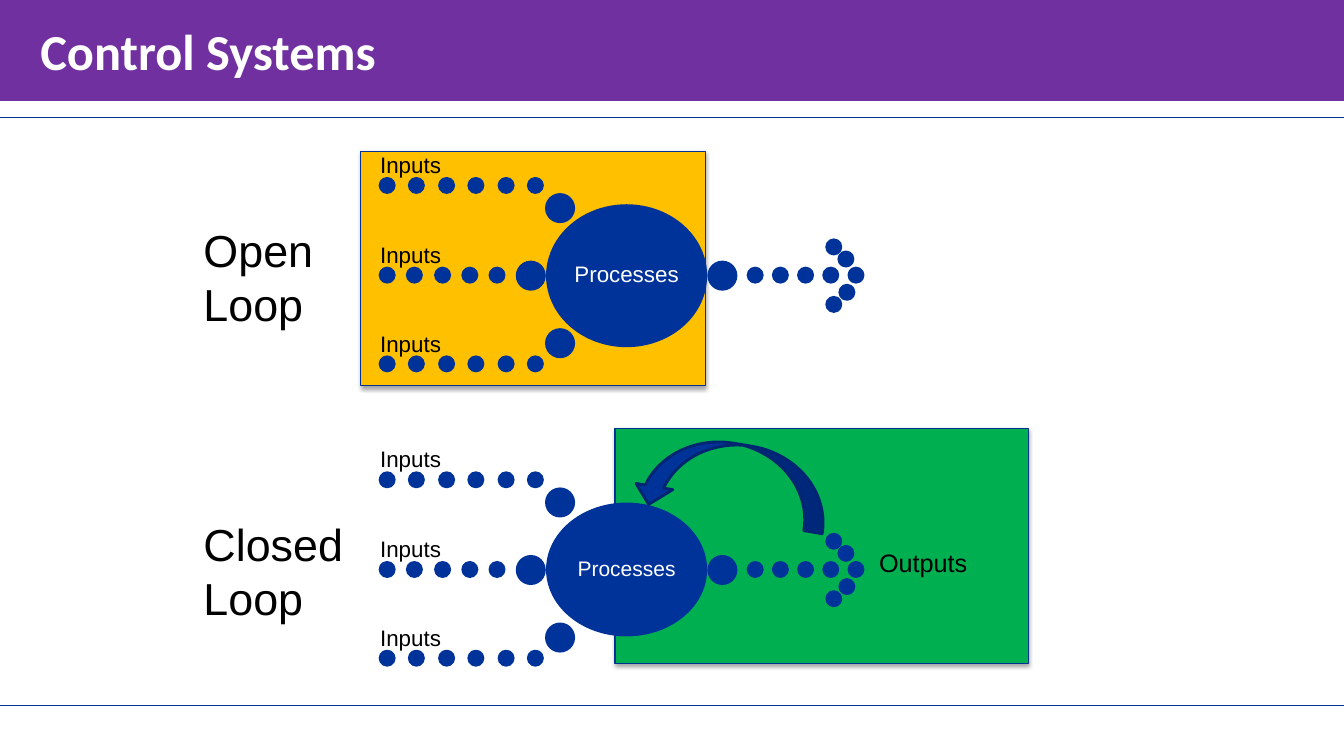
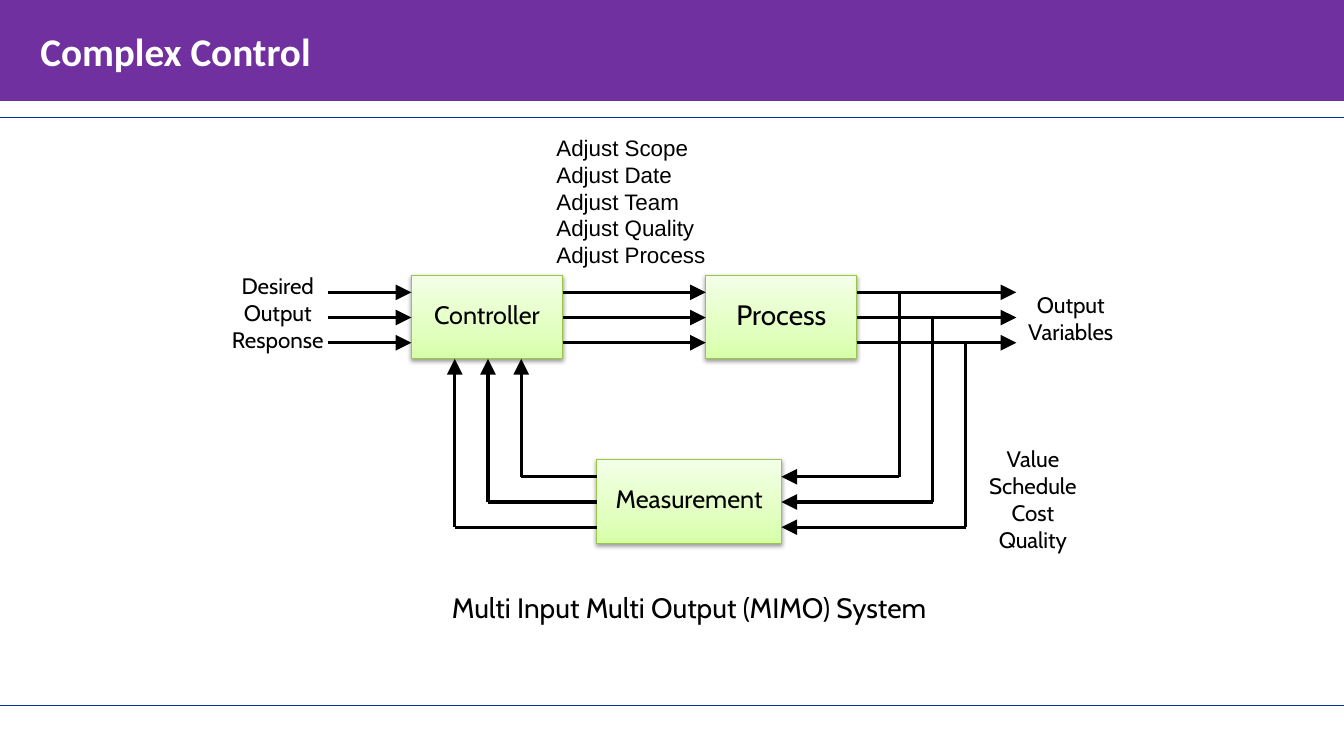
"""Build two slides on open-loop, closed-loop and multi-variable control."""
from copy import deepcopy
from dataclasses import dataclass

from lxml.etree import SubElement
from pptx import Presentation
from pptx.dml.color import RGBColor
from pptx.enum.shapes import MSO_CONNECTOR as Connector, MSO_SHAPE as Preset
from pptx.enum.text import MSO_ANCHOR as Anchor, MSO_AUTO_SIZE as AutoSize, PP_ALIGN as Align
from pptx.oxml.ns import qn
from pptx.presentation import Presentation as Deck
from pptx.shapes.autoshape import Shape
from pptx.shapes.connector import Connector as Line
from pptx.slide import Slide, SlideLayout
from pptx.text.text import TextFrame
from pptx.util import Emu, Pt

EMU_PER_PX = 9144
WIDTH, HEIGHT = 1333, 750
COLORS = {
    "band": "7030A0", "white": "FFFFFF", "black": "000000",
    "blue": "003399", "edge": "003296", "arrow_edge": "002671",
    "open": "FFC000", "closed": "00B050", "box_edge": "98C746",
    "box_low": "D6FFA8", "box_mid": "E2FFC1", "box_high": "F3FFE7",
}
GRADIENT = ((0, "box_low"), (0.35, "box_mid"), (1, "box_high"))


@dataclass(frozen=True)
class Area:
    """A rectangle in px."""
    left: int
    top: int
    width: int
    height: int

    def emu(self) -> tuple[Emu, ...]:
        """Return the four lengths in EMU."""
        return tuple(px(n) for n in (self.left, self.top, self.width, self.height))


@dataclass(frozen=True)
class Style:
    """The look of a piece of text."""
    size: int
    font: str = "Arial"
    color: str = "black"
    bold: bool = False
    align: Align = Align.LEFT
    spacing: float | None = None


@dataclass(frozen=True)
class Note:
    """Lines of text with their place and look."""
    lines: tuple[str, ...]
    area: Area
    style: Style


@dataclass(frozen=True)
class Loop:
    """One control loop: its middle row, circle, name and frame."""
    middle: int
    circle_height: int
    circle_size: int
    name: Note
    frame: Area
    frame_color: str


@dataclass(frozen=True)
class DotRow:
    """Evenly spaced dots, offset from the middle row."""
    first: int
    last: int
    count: int
    offset: int = 0


BAND = Area(0, 0, WIDTH, 100)
BAND_INSETS, BOX_INSETS, LABEL_INSETS = (40, 5, 10, 5), (10, 5, 10, 5), (5, 4, 5, 10)
CIRCLE_INSETS, NO_INSETS = (0, 2, 0, 2), (0, 0, 0, 0)
RULE_TOPS, FIRST_RULE_ID = (116, 700), 20

LOOPS = (
    Loop(273, 139, 16, Note(("Open", "Loop"), Area(192, 216, 150, 118), Style(32)),
         Area(358, 150, 342, 233), "open"),
    Loop(565, 130, 15, Note(("Closed", "Loop"), Area(192, 508, 167, 118), Style(32)),
         Area(610, 425, 410, 233), "closed"),
)
DOT, BIG_DOT = 14, 27
CIRCLE_LEFT, CIRCLE_WIDTH = 543, 157
INPUT_LEFT, INPUT_WIDTH, INPUT_HEIGHT = 377, 122, 35
INPUT_ROWS = (DotRow(INPUT_LEFT, 524, 6, -89), DotRow(INPUT_LEFT, 486, 5),
              DotRow(INPUT_LEFT, 524, 6, 88))
OUTPUT_ROW = DotRow(742, 842, 5)
BIG_DOTS = ((542, -67), (513, 0), (542, 67), (703, 0))
ARROW_HEAD = ((820, -28), (820, 29), (832, -16), (833, 17))
FEEDBACK, FEEDBACK_TILT = Area(630, 440, 193, 74), 9.6
OUTPUTS = Note(("Outputs",), Area(862, 538, 159, 40), Style(18))

CABIN_16, CABIN_18, CABIN_20 = (Style(n, "Cabin", align=Align.CENTER) for n in (16, 18, 20))
CONTROLLER = Note(("Controller",), Area(408, 273, 150, 83), CABIN_18)
PROCESS = Note(("Process",), Area(700, 273, 150, 83), CABIN_20)
MEASUREMENT = Note(("Measurement",), Area(592, 456, 183, 83), CABIN_18)
LANE_TOP, RETURN_TOP, LANE_GAP = 290, 473, 25
TAP_LEFT, ENTRY_RIGHT, TAP_GAP = 892, 517, 33
FORWARD_SPANS = ((325, 408), (558, 700), (850, 1008))
NOTES = (
    Note(("Desired Output Response",), Area(217, 265, 117, 91), CABIN_16),
    Note(("Output Variables",), Area(1008, 284, 108, 64), CABIN_16),
    Note(("Multi Input Multi Output (MIMO) System",), Area(375, 581, 617, 44), CABIN_20),
    Note(("Value", "Schedule", "Cost", "Quality"), Area(966, 437, 117, 118), CABIN_16),
    Note(("Adjust Scope", "Adjust Date", "Adjust Team", "Adjust Quality", "Adjust Process"),
         Area(542, 128, 208, 172), Style(16)),
)


def px(count: int) -> Emu:
    """Turn px into EMU."""
    return Emu(count * EMU_PER_PX)


def rgb(name: str) -> RGBColor:
    """Look up a colour by name."""
    return RGBColor.from_string(COLORS[name])


def write(frame: TextFrame, lines: tuple[str, ...], style: Style,
          insets: tuple[int, int, int, int], anchor: Anchor = Anchor.MIDDLE) -> None:
    """Fill a text frame, one paragraph a line."""
    frame.word_wrap = True
    frame.vertical_anchor = anchor
    frame.margin_left, frame.margin_top, frame.margin_right, frame.margin_bottom = map(px, insets)
    for index, text in enumerate(lines):
        para = frame.add_paragraph() if index else frame.paragraphs[0]
        para.alignment = style.align
        if style.spacing:
            para.line_spacing = style.spacing
        span = para.add_run()
        span.text = text
        span.font.name = style.font
        span.font.size = Pt(style.size)
        span.font.bold = style.bold
        span.font.color.rgb = rgb(style.color)


def add_note(page: Slide, note: Note) -> None:
    """Add a text box that grows with its text."""
    frame = page.shapes.add_textbox(*note.area.emu()).text_frame
    write(frame, note.lines, note.style, BOX_INSETS, Anchor.TOP)
    frame.auto_size = AutoSize.SHAPE_TO_FIT_TEXT


def add_shape(page: Slide, preset: Preset, area: Area, fill: str, edge: str,
              weight: float) -> Shape:
    """Add a flat preset shape."""
    shape = page.shapes.add_shape(preset, *area.emu())
    shape.shadow.inherit = False
    shape.fill.solid()
    shape.fill.fore_color.rgb = rgb(fill)
    shape.line.color.rgb = rgb(edge)
    shape.line.width = Pt(weight)
    return shape


def add_shadow(shape: Shape, opacity: int, distance: int) -> None:
    """Give a shape a soft shadow straight below."""
    effects = shape.element.spPr.find(qn("a:effectLst"))
    shadow = SubElement(effects, qn("a:outerShdw"), blurRad="40000", dist=str(distance),
                        dir="5400000", rotWithShape="0")
    color = SubElement(shadow, qn("a:srgbClr"), val=COLORS["black"])
    SubElement(color, qn("a:alpha"), val=str(opacity * 1000))


def add_line(page: Slide, start: tuple[int, int], end: tuple[int, int], color: str = "black",
             weight: float = 2.25, arrow: bool = False) -> Line:
    """Add a straight line, with an arrowhead at its end if asked."""
    line = page.shapes.add_connector(Connector.STRAIGHT, *map(px, (*start, *end)))
    line.line.color.rgb = rgb(color)
    line.line.width = Pt(weight)
    properties = line.element.spPr
    if arrow:
        SubElement(properties.find(qn("a:ln")), qn("a:tailEnd"), type="triangle",
                   w="lg", len="lg")
    SubElement(properties, qn("a:effectLst"))
    return line


def add_rules(page: Slide, layout: SlideLayout) -> None:
    """Put the two thin rules on the shared layout."""
    for index, top in enumerate(RULE_TOPS, FIRST_RULE_ID):
        rule = add_line(page, (0, top), (WIDTH, top), "blue", 0.5).element
        rule.nvCxnSpPr.cNvPr.set("id", str(index))
        layout.shapes.element.append(rule)


def add_page(deck: Deck, layout: SlideLayout, title: str, size: int) -> Slide:
    """Add a slide with the title band."""
    page = deck.slides.add_slide(layout)
    band = page.shapes.title
    band.left, band.top, band.width, band.height = BAND.emu()
    band.fill.solid()
    band.fill.fore_color.rgb = rgb("band")
    write(band.text_frame, (title,), Style(size, "Calibri", "white", True), BAND_INSETS)
    band.text_frame.auto_size = AutoSize.NONE
    return page


def add_dot(page: Slide, left: int, middle: int, size: int = DOT) -> None:
    """Add a round dot centred on a height."""
    area = Area(left, middle - size // 2, size, size)
    add_shape(page, Preset.OVAL, area, "blue", "blue", 2)


def add_dot_row(page: Slide, row: DotRow, middle: int) -> None:
    """Add evenly spaced dots."""
    gap = (row.last - row.first) / (row.count - 1)
    for index in range(row.count):
        add_dot(page, round(row.first + index * gap), middle + row.offset)


def add_loop(page: Slide, loop: Loop) -> None:
    """Draw inputs, process and output of one loop."""
    for row in (*INPUT_ROWS, OUTPUT_ROW):
        add_dot_row(page, row, loop.middle)
    for dots, size in ((BIG_DOTS, BIG_DOT), (ARROW_HEAD, DOT)):
        for left, offset in dots:
            add_dot(page, left, loop.middle + offset, size)
    circle_area = Area(CIRCLE_LEFT, loop.middle - loop.circle_height // 2,
                       CIRCLE_WIDTH, loop.circle_height)
    circle = add_shape(page, Preset.OVAL, circle_area, "blue", "blue", 2)
    style = Style(loop.circle_size, color="white", align=Align.CENTER, spacing=0.9)
    write(circle.text_frame, ("Processes",), style, CIRCLE_INSETS)
    for row in INPUT_ROWS:
        top = loop.middle + row.offset - DOT // 2 - INPUT_HEIGHT
        label = page.shapes.add_textbox(*Area(INPUT_LEFT, top, INPUT_WIDTH, INPUT_HEIGHT).emu())
        write(label.text_frame, ("Inputs",), Style(16, spacing=0.9), NO_INSETS, Anchor.BOTTOM)
    add_note(page, loop.name)


def draw_loops(page: Slide) -> None:
    """Draw the open and the closed loop."""
    for loop in LOOPS:
        frame = add_shape(page, Preset.RECTANGLE, loop.frame, loop.frame_color, "edge", 0.75)
        add_shadow(frame, 35, 23000)
        add_loop(page, loop)
    feedback = add_shape(page, Preset.CURVED_UP_ARROW, FEEDBACK, "blue", "arrow_edge", 2)
    feedback.rotation = FEEDBACK_TILT
    for flip in ("flipH", "flipV"):
        feedback.element.spPr.xfrm.set(flip, "1")
    add_note(page, OUTPUTS)


def add_block(page: Slide, block: Note) -> None:
    """Add a labelled box with a green gradient."""
    box = add_shape(page, Preset.RECTANGLE, block.area, "white", "box_edge", 0.75)
    add_shadow(box, 38, 20000)
    box.fill.gradient()
    stop_list = box.element.spPr.find(".//" + qn("a:gsLst"))
    stop_list.insert(1, deepcopy(stop_list[0]))
    for stop, (position, color) in zip(box.fill.gradient_stops, GRADIENT):
        stop.position = position
        stop.color.rgb = rgb(color)
    box.fill.gradient_angle = 90
    write(box.text_frame, block.lines, block.style, LABEL_INSETS)


def draw_block_diagram(page: Slide) -> None:
    """Draw the boxes, the three lanes of wires and the notes."""
    for block in (MEASUREMENT, PROCESS, CONTROLLER):
        add_block(page, block)
    left, right = MEASUREMENT.area.left, MEASUREMENT.area.left + MEASUREMENT.area.width
    bottom = CONTROLLER.area.top + CONTROLLER.area.height
    for lane in range(3):
        forward, back = LANE_TOP + lane * LANE_GAP, RETURN_TOP + lane * LANE_GAP
        tap, entry = TAP_LEFT + lane * TAP_GAP, ENTRY_RIGHT - lane * TAP_GAP
        for start, end in FORWARD_SPANS:
            add_line(page, (start, forward), (end, forward), arrow=True)
        add_line(page, (tap, forward), (tap, back))
        add_line(page, (tap, back), (right, back), arrow=True)
        add_line(page, (left, back), (entry, back))
        add_line(page, (entry, back), (entry, bottom), arrow=True)
    for note in NOTES:
        add_note(page, note)


def main() -> None:
    """Build and save the deck."""
    deck = Presentation()
    deck.slide_width, deck.slide_height = px(WIDTH), px(HEIGHT)
    layout = deck.slide_layouts[5]
    loops_page = add_page(deck, layout, "Control Systems", 36)
    add_rules(loops_page, layout)
    draw_loops(loops_page)
    draw_block_diagram(add_page(deck, layout, "Complex Control", 28))
    deck.save("out.pptx")


if __name__ == "__main__":
    main()
